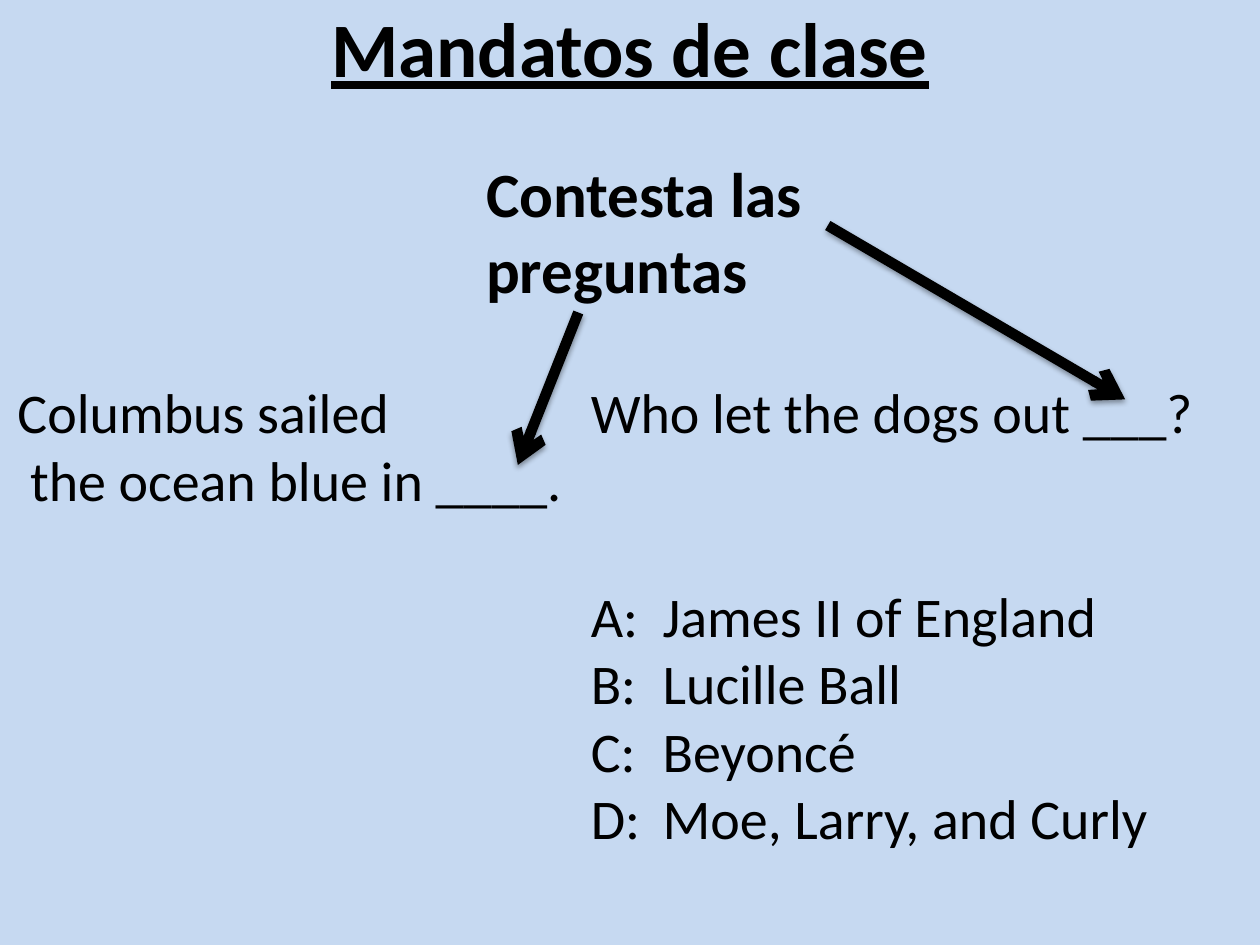
import pptx
import pptx.util
import pptx.dml.color
import pptx.enum.shapes
import pptx.enum.text
import pptx.oxml
import pptx.oxml.ns
from pptx.util import Inches

INK = "000000"
SKY = "C6D9F1"
NS = pptx.oxml.ns.nsdecls("a")


def rgb(hex_color):
    """Turn a hex string into a colour."""
    return pptx.dml.color.RGBColor.from_string(hex_color)


def add_text(s, box, lines, size, bold=False, underline=False):
    """Add a wrapping text box with one paragraph per line."""
    sp = s.shapes.add_textbox(*[Inches(v) for v in box])
    tf = sp.text_frame
    tf.word_wrap = True
    tf.text = "\n".join(lines)
    for p in tf.paragraphs:
        for r in p.runs:
            r.font.name = "Calibri"
            r.font.size = pptx.util.Pt(size)
            r.font.bold = bold
            r.font.underline = underline
            r.font.color.rgb = rgb(INK)
    return tf


def indent(p, left, first=0):
    """Set the left margin and first-line indent of a paragraph."""
    pPr = p._p.get_or_add_pPr()
    pPr.set("marL", str(Inches(left)))
    pPr.set("indent", str(Inches(first)))


def add_arrow(s, start, end):
    """Add a thick arrow with a soft shadow below it."""
    points = [Inches(v) for v in start + end]
    cx = s.shapes.add_connector(pptx.enum.shapes.MSO_CONNECTOR.STRAIGHT, *points)
    cx.line.color.rgb = rgb(INK)
    cx.line.width = pptx.util.Pt(6)
    cx.line._get_or_add_ln().append(
        pptx.oxml.parse_xml(f'<a:tailEnd {NS} type="arrow"/>'))
    cx._element.spPr.append(pptx.oxml.parse_xml(
        f'<a:effectLst {NS}><a:outerShdw blurRad="40000" dist="20000" '
        f'dir="5400000" rotWithShape="0"><a:srgbClr val="{INK}">'
        '<a:alpha val="38000"/></a:srgbClr></a:outerShdw></a:effectLst>'))


def add_title(s, text):
    """Add the centred, underlined heading."""
    tf = add_text(s, (0, -0.31, 10, 1.36), [text], 44, True, True)
    tf.vertical_anchor = pptx.enum.text.MSO_ANCHOR.MIDDLE
    tf.paragraphs[0].alignment = pptx.enum.text.PP_ALIGN.CENTER


def add_quiz(s, box, question, answers):
    """Add a question with its lettered answers below."""
    lines = [f"{letter}:\t{answer}" for letter, answer in zip("ABCD", answers)]
    tf = add_text(s, box, [question] + lines, 32)
    for p in tf.paragraphs[1:]:
        indent(p, 0.57, -0.57)
    tf.paragraphs[1].space_before = pptx.util.Pt(78)


def main():
    """Build the slide and save it."""
    prs = pptx.Presentation()
    prs.slide_width, prs.slide_height = Inches(10), Inches(7.5)
    s = prs.slides.add_slide(prs.slide_layouts[6])
    s.background.fill.solid()
    s.background.fill.fore_color.rgb = rgb(SKY)

    add_title(s, "Mandatos de clase")
    tf = add_text(s, (3.76, 1.18, 4.13, 1.78), ["Contesta las preguntas"], 36, True)
    tf.paragraphs[0].space_before = pptx.util.Pt(7.2)
    tf = add_text(s, (0.04, 2.95, 4.98, 1.72),
                  ["Columbus sailed", "the ocean blue in ____."], 32)
    indent(tf.paragraphs[1], 0.1)
    add_arrow(s, (4.59, 2.48), (4.11, 3.69))
    add_quiz(s, (4.59, 2.95, 5.41, 3.87), "Who let the dogs out ___?",
             ["James II of England", "Lucille Ball", "Beyoncé",
              "Moe, Larry, and Curly"])
    add_arrow(s, (6.57, 1.79), (8.93, 3.17))
    prs.save("out.pptx")


main()
